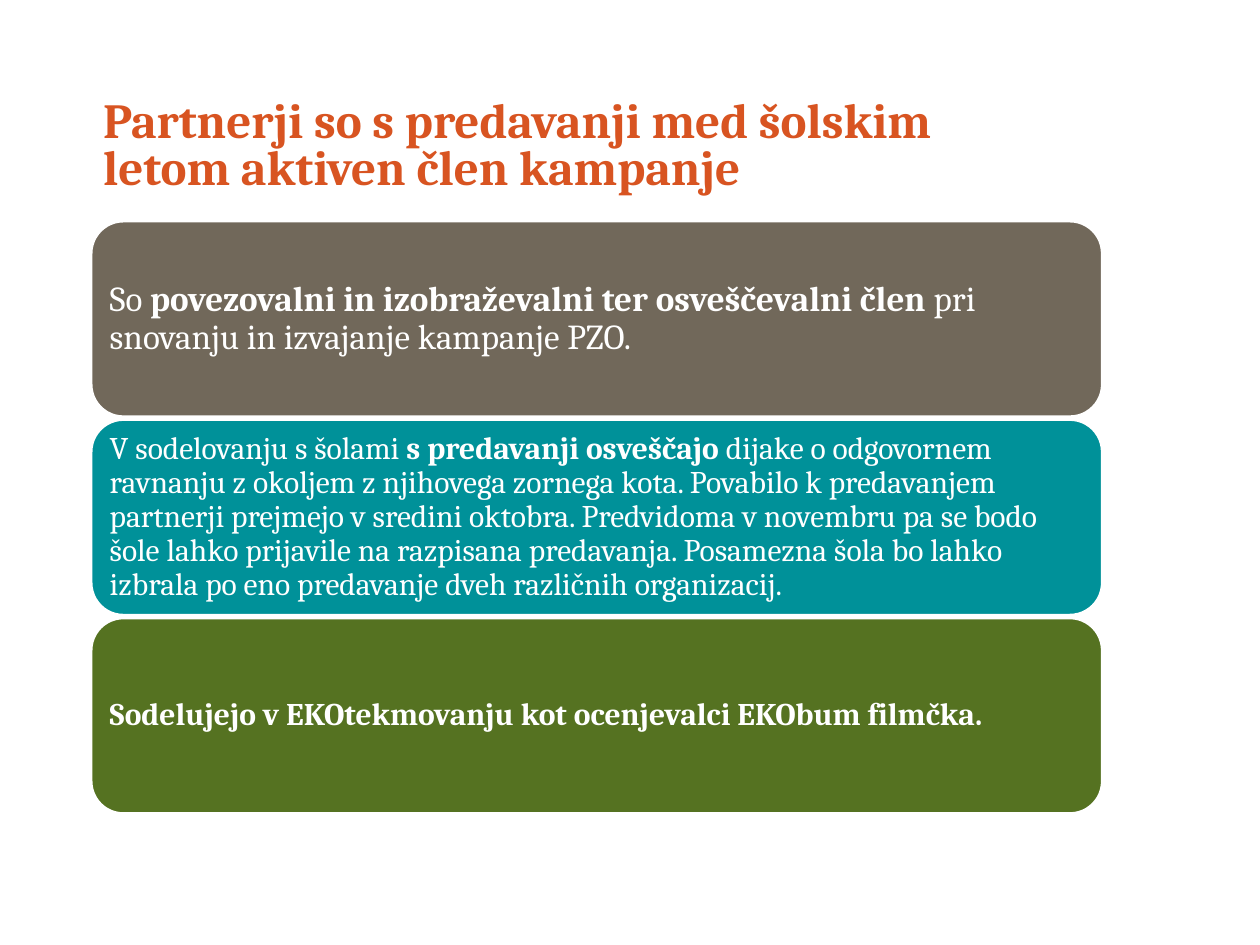
"""Build the slide on the partners' lectures during the school year."""
from dataclasses import dataclass

from pptx import Presentation
from pptx.dml.color import RGBColor
from pptx.enum import shapes, text
from pptx.util import Cm, Pt

ORANGE = RGBColor(0xD8, 0x54, 0x21)
BROWN = RGBColor(0x71, 0x68, 0x5A)
TEAL = RGBColor(0x00, 0x91, 0x99)
GREEN = RGBColor(0x55, 0x72, 0x21)
WHITE = RGBColor(0xFF, 0xFF, 0xFF)

LEFT, PANEL_TOP, PANEL_WIDTH, PANEL_HEIGHT, PITCH = 1.83, 4.45, 20.4, 3.96, 4.0


@dataclass(frozen=True)
class Run:
    text: str
    bold: bool = False


@dataclass(frozen=True)
class Panel:
    fill: RGBColor
    size: int
    runs: tuple[Run, ...]


TITLE = Run("Partnerji so s predavanji med šolskim letom aktiven člen kampanje", True)
PANELS = (
    Panel(BROWN, 20, (
        Run("So "),
        Run("povezovalni in izobraževalni ter osveščevalni člen", True),
        Run(" pri snovanju in izvajanje kampanje PZO."),
    )),
    Panel(TEAL, 18, (
        Run("V sodelovanju s šolami "),
        Run("s predavanji osveščajo ", True),
        Run("dijake o odgovornem ravnanju z okoljem z njihovega zornega kota. "
            "Povabilo k predavanjem partnerji prejmejo v sredini oktobra. "
            "Predvidoma v novembru pa se bodo šole lahko prijavile na razpisana "
            "predavanja. Posamezna šola bo lahko izbrala po eno predavanje "
            "dveh različnih organizacij."),
    )),
    Panel(GREEN, 18, (
        Run("Sodelujejo v EKOtekmovanju kot ocenjevalci EKObum filmčka.", True),
    )),
)


def set_all(target: object, values: dict) -> None:
    for name, value in values.items():
        setattr(target, name, value)


def write(tf, runs: tuple[Run, ...], size: int, color: RGBColor,
          spacing: float, margin: float) -> None:
    sides = ("left", "right", "top", "bottom")
    set_all(tf, {f"margin_{side}": Cm(margin) for side in sides})
    set_all(tf, {"word_wrap": True, "auto_size": text.MSO_AUTO_SIZE.NONE,
                 "vertical_anchor": text.MSO_ANCHOR.MIDDLE})
    p = tf.paragraphs[0]
    set_all(p, {"alignment": text.PP_ALIGN.LEFT, "line_spacing": spacing})
    for run in runs:
        r = p.add_run()
        r.text = run.text
        set_all(r.font, {"name": "Cambria", "size": Pt(size), "bold": run.bold})
        r.font.color.rgb = color


def add_panel(s, panel: Panel, index: int) -> None:
    sp = s.shapes.add_shape(
        shapes.MSO_SHAPE.ROUNDED_RECTANGLE, Cm(LEFT), Cm(PANEL_TOP + index * PITCH),
        Cm(PANEL_WIDTH), Cm(PANEL_HEIGHT))
    sp.shadow.inherit = False
    sp.fill.solid()
    sp.fill.fore_color.rgb = panel.fill
    sp.line.color.rgb = WHITE
    sp.line.width = Pt(2)
    write(sp.text_frame, panel.runs, panel.size, WHITE, 0.9, 0.19)


def main() -> None:
    prs = Presentation()
    set_all(prs, {"slide_width": Cm(25.4), "slide_height": Cm(19.05)})
    s = prs.slides.add_slide(prs.slide_layouts[5])
    title = s.shapes.title
    set_all(title, {"left": Cm(LEFT), "top": Cm(1.52),
                    "width": Cm(18.77), "height": Cm(2.92)})
    write(title.text_frame, (TITLE,), 28, ORANGE, 0.8, 0.25)
    for index, panel in enumerate(PANELS):
        add_panel(s, panel, index)
    prs.save("out.pptx")


if __name__ == "__main__":
    main()
